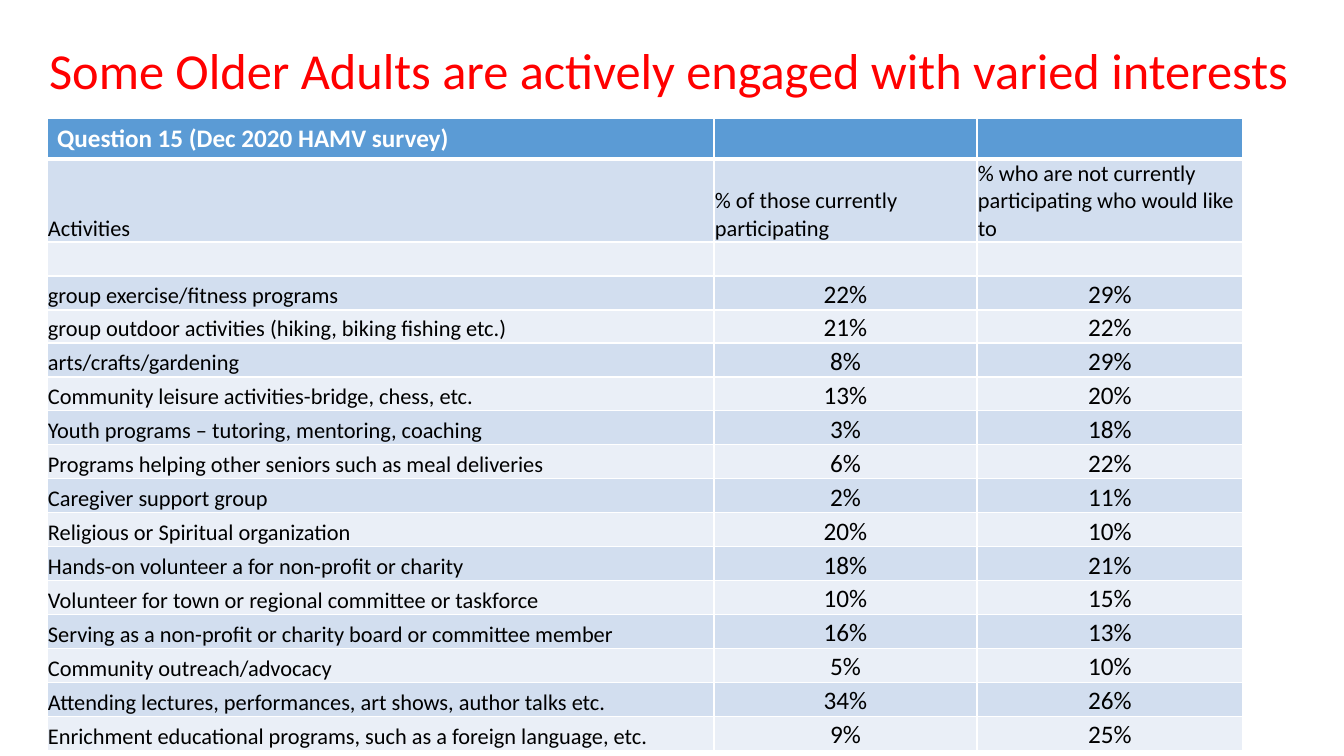
from lxml import etree
from pptx import Presentation
from pptx.dml.color import RGBColor
from pptx.enum.text import MSO_ANCHOR, PP_ALIGN
from pptx.oxml.ns import qn
from pptx.util import Pt

LEFT, CENTER = PP_ALIGN.LEFT, PP_ALIGN.CENTER
MIDDLE, BOTTOM = MSO_ANCHOR.MIDDLE, MSO_ANCHOR.BOTTOM

SLIDE_W, SLIDE_H = 1344, 756
SCALE = 12192000 / SLIDE_W
FONT = "Calibri"
COLORS = {
    "title": "FF0000",
    "header": "5B9BD5",
    "odd_band": "D2DEEF",
    "even_band": "EAEFF7",
    "white": "FFFFFF",
    "text": "000000",
}

TITLE = "Some Older Adults are actively engaged with varied interests"
QUESTION = ("Question 15 (Dec 2020 HAMV survey)", "", "")
HEADINGS = (
    "Activities",
    "% of those currently participating",
    "% who are not currently participating who would like to",
)
ACTIVITIES = [
    ("group exercise/fitness programs", 22, 29),
    ("group outdoor activities (hiking, biking fishing etc.)", 21, 22),
    ("arts/crafts/gardening", 8, 29),
    ("Community leisure activities-bridge, chess, etc.", 13, 20),
    ("Youth programs – tutoring, mentoring, coaching", 3, 18),
    ("Programs helping other seniors such as meal deliveries", 6, 22),
    ("Caregiver support group", 2, 11),
    ("Religious or Spiritual organization", 20, 10),
    ("Hands-on volunteer a for non-profit or charity", 18, 21),
    ("Volunteer for town or regional committee or taskforce", 10, 15),
    ("Serving as a non-profit or charity board or committee member", 16, 13),
    ("Community outreach/advocacy", 5, 10),
    ("Attending lectures, performances, art shows, author talks etc.", 34, 26),
    ("Enrichment educational programs, such as a foreign language, etc.", 9, 25),
]
COLUMN_WIDTHS = (667, 263, 266)
QUESTION_H, HEADINGS_H, ROW_H = 40, 83, 34


def px(length):
    return round(length * SCALE)


def rgb(name):
    return RGBColor.from_string(COLORS[name])


def format_font(font, size, color, bold=False):
    values = {"name": FONT, "size": Pt(size), "bold": bold}
    for attribute, value in values.items():
        setattr(font, attribute, value)
    font.color.rgb = rgb(color)


def add_title(slide, left, top, width, height):
    title = slide.shapes.title
    box = {"left": left, "top": top, "width": width, "height": height}
    for attribute, length in box.items():
        setattr(title, attribute, px(length))
    title.text_frame.vertical_anchor = MIDDLE
    paragraph = title.text_frame.paragraphs[0]
    paragraph.alignment = LEFT
    paragraph.line_spacing = 0.9
    run = paragraph.add_run()
    run.text = TITLE
    format_font(run.font, 36, "title")


def add_borders(cell, widths):
    """Draw white cell borders; widths maps a side (L, R, T, B) to points."""
    properties = cell._tc.get_or_add_tcPr()
    for side, width in widths.items():
        line = etree.SubElement(properties, qn(f"a:ln{side}"), w=str(Pt(width)))
        fill = etree.SubElement(line, qn("a:solidFill"))
        etree.SubElement(fill, qn("a:srgbClr"), val=COLORS["white"])


def fill_cell(cell, text, row, size, color, alignment):
    is_question = row == 0
    add_borders(cell, {
        "L": 1, "R": 1,
        "T": 3 if row == 1 else 1,
        "B": 3 if is_question else 1,
    })
    band = "header" if is_question else "odd_band" if row % 2 else "even_band"
    cell.fill.solid()
    cell.fill.fore_color.rgb = rgb(band)
    if not is_question:
        layout = {
            "margin_left": px(1), "margin_right": px(1),
            "margin_top": px(1), "margin_bottom": 0,
            "vertical_anchor": BOTTOM,
        }
        for attribute, value in layout.items():
            setattr(cell, attribute, value)
    if text:
        paragraph = cell.text_frame.paragraphs[0]
        paragraph.alignment = alignment
        run = paragraph.add_run()
        run.text = text
        format_font(run.font, size, color, bold=is_question)


def add_survey_table(slide, left, top):
    shares = [(name, f"{now}%", f"{wish}%") for name, now, wish in ACTIVITIES]
    rows = [QUESTION, HEADINGS, ("", "", ""), *shares]
    heights = [QUESTION_H, HEADINGS_H] + [ROW_H] * (len(rows) - 2)
    heights[4] = ROW_H - 1
    table = slide.shapes.add_table(
        len(rows), len(COLUMN_WIDTHS), px(left), px(top),
        px(sum(COLUMN_WIDTHS)), px(sum(heights)),
    ).table
    for column, width in zip(table.columns, COLUMN_WIDTHS):
        column.width = px(width)
    for row, (texts, height) in enumerate(zip(rows, heights)):
        table.rows[row].height = px(height)
        for column, text in enumerate(texts):
            is_share = row > 2 and column > 0
            fill_cell(
                table.cell(row, column), text, row,
                size=18 if row == 0 or is_share else 16,
                color="white" if row == 0 else "text",
                alignment=CENTER if is_share else LEFT,
            )


def main():
    presentation = Presentation()
    presentation.slide_width = px(SLIDE_W)
    presentation.slide_height = px(SLIDE_H)
    slide = presentation.slides.add_slide(presentation.slide_layouts[5])
    add_title(slide, 39, 0, 1268, 146)
    add_survey_table(slide, 47, 118)
    presentation.save("out.pptx")


if __name__ == "__main__":
    main()
